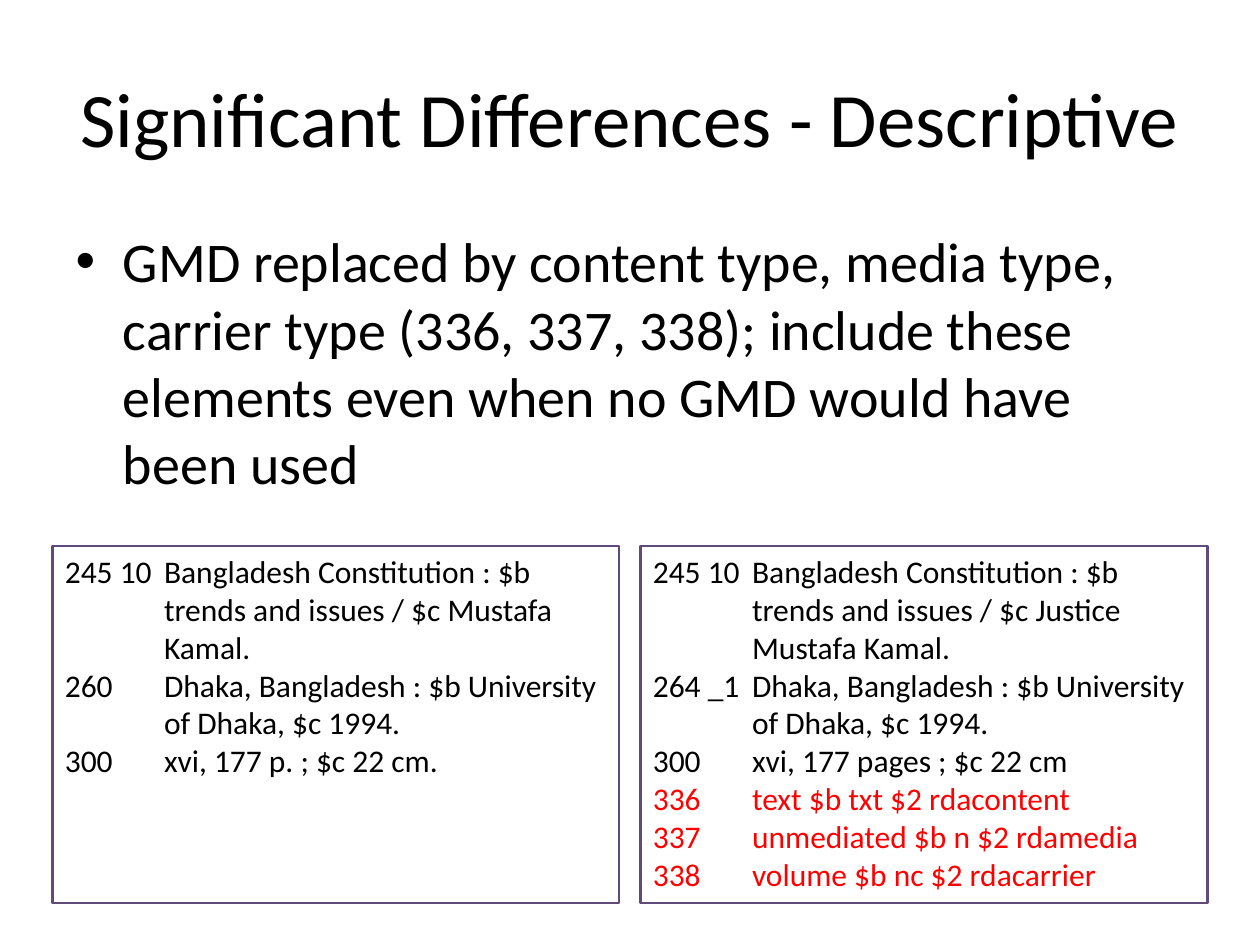
from pptx import Presentation
from pptx.dml.color import RGBColor
from pptx.enum.text import MSO_ANCHOR, MSO_AUTO_SIZE, PP_ALIGN
from pptx.util import Pt

BLACK = RGBColor(0x00, 0x00, 0x00)
RED = RGBColor(0xFF, 0x00, 0x00)
PURPLE = RGBColor(0x60, 0x4A, 0x7B)
FONT = "Calibri"
MIDDLE = MSO_ANCHOR.MIDDLE
NO_AUTOFIT = MSO_AUTO_SIZE.NONE
CENTER = PP_ALIGN.CENTER
LEFT = PP_ALIGN.LEFT

TAG_WIDTH = 56.7
RECORD_TOP, RECORD_WIDTH, RECORD_HEIGHT = 312, 324, 204

AACR_RECORD = [
    ("245 10", "Bangladesh Constitution : $b trends and issues / $c Mustafa Kamal."),
    ("260", "Dhaka, Bangladesh : $b University of Dhaka, $c 1994."),
    ("300", "xvi, 177 p. ; $c 22 cm."),
]
RDA_RECORD = [
    ("245 10", "Bangladesh Constitution : $b trends and issues / $c Justice Mustafa Kamal."),
    ("264 _1", "Dhaka, Bangladesh : $b University of Dhaka, $c 1994."),
    ("300", "xvi, 177 pages ; $c 22 cm"),
    ("336", "text $b txt $2 rdacontent"),
    ("337", "unmediated $b n $2 rdamedia"),
    ("338", "volume $b nc $2 rdacarrier"),
]
NEW_TAGS = ("336", "337", "338")


def format_paragraph(paragraph, size, color, alignment):
    paragraph.alignment = alignment
    for run in paragraph.runs:
        run.font.name = FONT
        run.font.size = Pt(size)
        run.font.color.rgb = color


def set_hanging_indent(paragraph, indent):
    """Start wrapped lines, and text after a tab, at the indent in points."""
    properties = paragraph._p.get_or_add_pPr()
    properties.set("marL", str(Pt(indent)))
    properties.set("indent", str(-Pt(indent)))


presentation = Presentation()
presentation.slide_width = Pt(720)
presentation.slide_height = Pt(540)
slide = presentation.slides.add_slide(presentation.slide_layouts[1])

# Title and bullet
title = slide.shapes.title
title.left, title.top, title.width, title.height = Pt(36), Pt(21.6), Pt(648), Pt(90)
title.text_frame.text = "Significant Differences - Descriptive"
title.text_frame.vertical_anchor = MIDDLE
title.text_frame.auto_size = NO_AUTOFIT
format_paragraph(title.text_frame.paragraphs[0], 44, BLACK, CENTER)

body = slide.placeholders[1]
body.left, body.top, body.width, body.height = Pt(36), Pt(126), Pt(648), Pt(162)
body.text_frame.text = (
    "GMD replaced by content type, media type, carrier type (336, 337, 338); "
    "include these elements even when no GMD would have been used"
)
body.text_frame.auto_size = NO_AUTOFIT
bullet = body.text_frame.paragraphs[0]
format_paragraph(bullet, 32, BLACK, LEFT)
set_hanging_indent(bullet, 27)

# Catalogue records side by side
for left, line_width, record in ((30, 1.25, AACR_RECORD), (366, 1.5, RDA_RECORD)):
    box = slide.shapes.add_textbox(
        Pt(left), Pt(RECORD_TOP), Pt(RECORD_WIDTH), Pt(RECORD_HEIGHT)
    )
    box.line.color.rgb = PURPLE
    box.line.width = Pt(line_width)
    text_frame = box.text_frame
    text_frame.word_wrap = True
    text_frame.auto_size = NO_AUTOFIT
    for index, (tag, content) in enumerate(record):
        paragraph = text_frame.add_paragraph() if index else text_frame.paragraphs[0]
        paragraph.text = f"{tag}\t{content}"
        format_paragraph(paragraph, 18, RED if tag in NEW_TAGS else BLACK, LEFT)
        set_hanging_indent(paragraph, TAG_WIDTH)

presentation.save("out.pptx")
